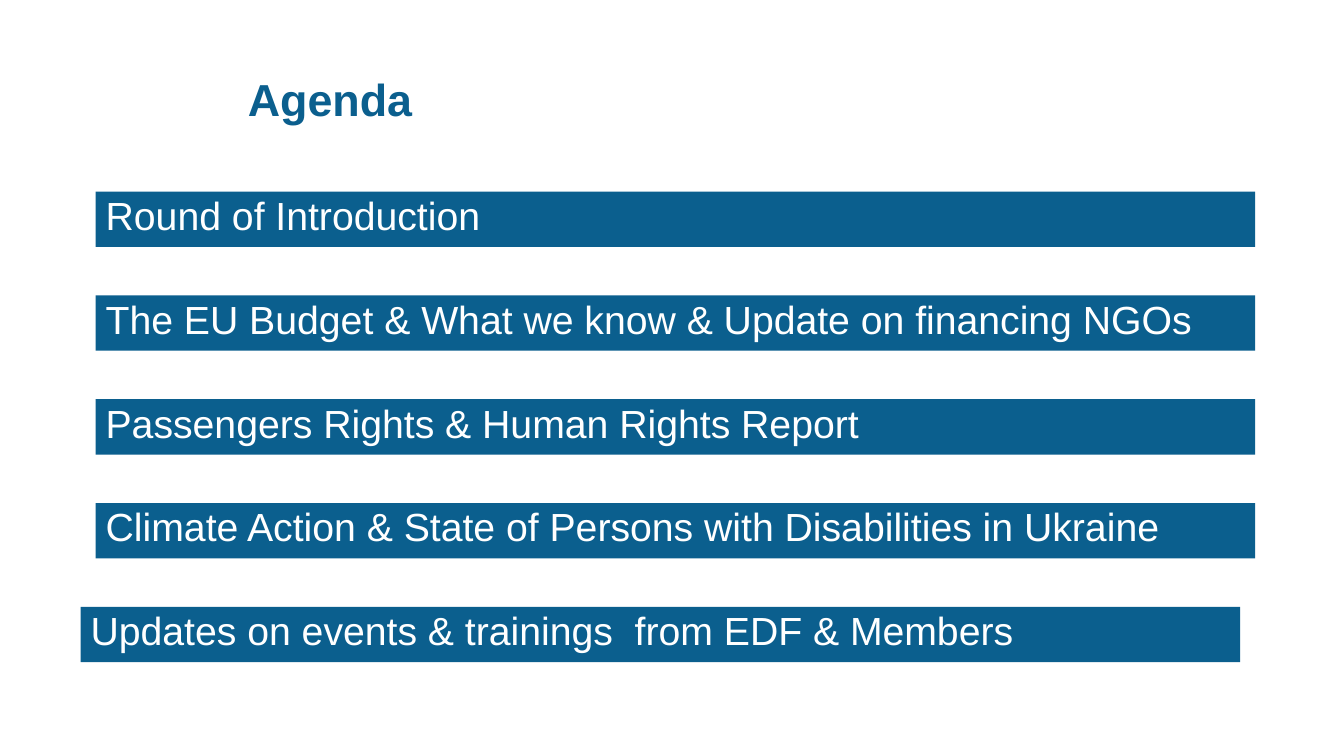
"""Build the agenda slide with its five topic bars."""
import pptx
import pptx.dml.color
import pptx.enum.shapes
import pptx.enum.text
import pptx.util

Inches = pptx.util.Inches
ANCHOR = pptx.enum.text.MSO_ANCHOR


class Deck:
    """Holds the style and the current slide."""

    font = "Arial"
    colors = {"blue": "0B5F8E", "white": "FFFFFF"}

    def __init__(self):
        self.prs = pptx.Presentation()
        self.prs.slide_width = Inches(13.33)
        self.prs.slide_height = Inches(7.5)
        self.slide = self.prs.slides.add_slide(self.prs.slide_layouts[6])

    def color(self, name):
        """Return the named colour."""
        return pptx.dml.color.RGBColor.from_string(self.colors[name])

    def label(self, shape, text, size, color, anchor, bold=False):
        """Put one left-aligned line into a shape."""
        frame = shape.text_frame
        frame.word_wrap = True
        frame.vertical_anchor = anchor
        line = frame.paragraphs[0]
        line.alignment = pptx.enum.text.PP_ALIGN.LEFT
        line.line_spacing = 0.9
        run = line.add_run()
        run.text = text
        run.font.name = self.font
        run.font.size = pptx.util.Pt(size)
        run.font.bold = bold
        run.font.color.rgb = self.color(color)

    def title(self, text, left, top, width, height):
        """Add the slide title."""
        box = self.slide.shapes.add_textbox(
            Inches(left), Inches(top), Inches(width), Inches(height))
        self.label(box, text, 32, "blue", ANCHOR.MIDDLE, bold=True)

    def bar(self, text, left, top, width, height):
        """Add a filled bar with a topic."""
        shape = self.slide.shapes.add_shape(
            pptx.enum.shapes.MSO_SHAPE.RECTANGLE,
            Inches(left), Inches(top), Inches(width), Inches(height))
        shape.shadow.inherit = False
        shape.fill.solid()
        shape.fill.fore_color.rgb = self.color("blue")
        shape.line.fill.background()
        self.label(shape, text, 28, "white", ANCHOR.TOP)


def main():
    """Build and save the slide."""
    deck = Deck()
    deck.title("Agenda", 2.36, 0.6, 10.09, 0.83)
    topics = [
        ("Round of Introduction", 0.95),
        ("The EU Budget & What we know & Update on financing NGOs", 0.95),
        ("Passengers Rights & Human Rights Report", 0.95),
        ("Climate Action & State of Persons with Disabilities in Ukraine", 0.95),
        ("Updates on events & trainings  from EDF & Members", 0.8),
    ]
    for row, (text, left) in enumerate(topics):
        deck.bar(text, left, 1.9 + 1.03 * row, 11.5, 0.55)
    deck.prs.save("out.pptx")


if __name__ == "__main__":
    main()
